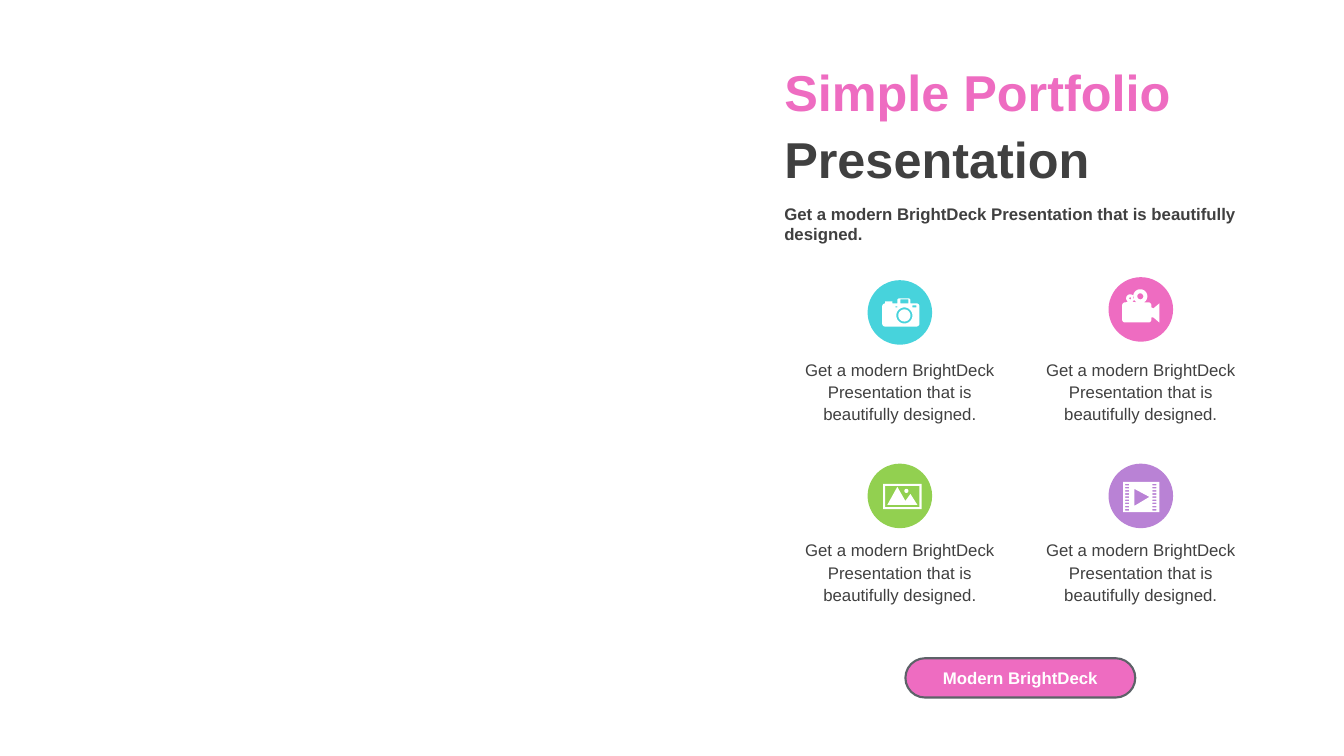
from math import cos, radians, sin

from pptx import Presentation
from pptx.dml.color import RGBColor
from pptx.enum.shapes import MSO_SHAPE as Shape
from pptx.enum.text import MSO_ANCHOR as Anchor, MSO_AUTO_SIZE as AutoSize, PP_ALIGN as Align
from pptx.util import Inches, Pt

COLORS = {
    "cyan": "47D3DC", "pink": "EE6CC1", "green": "92D050", "purple": "B982D5",
    "text": "404040", "white": "FFFFFF", "outline": "5D6268",
}
FONT = "Arial"
SENTENCE = "Get a modern BrightDeck Presentation that is beautifully designed."
COLUMNS = (7.77, 10.16)
CAPTION_ROWS = (3.5, 5.29)
CAPTION_WIDTH, CIRCLE_SIZE = 2.31, 0.64


def color(name):
    return RGBColor.from_string(COLORS[name])


def set_font(font, size, color_name, bold=False):
    font.name = FONT
    font.size = Pt(size)
    font.bold = bold
    font.color.rgb = color(color_name)


def add_text(slide, left, top, width, height, text, bold=False, align=Align.LEFT, spacing=None):
    box = slide.shapes.add_textbox(Inches(left), Inches(top), Inches(width), Inches(height))
    frame = box.text_frame
    frame.word_wrap = True
    frame.auto_size = AutoSize.SHAPE_TO_FIT_TEXT
    paragraph = frame.paragraphs[0]
    paragraph.text = text
    paragraph.alignment = align
    paragraph.line_spacing = spacing
    set_font(paragraph.font, 12, "text", bold)


def add_title(slide):
    box = slide.shapes.add_textbox(Inches(7.68), Inches(0.58), Inches(4.58), Inches(1.26))
    frame = box.text_frame
    frame.word_wrap = True
    frame.vertical_anchor = Anchor.MIDDLE
    paragraph = frame.paragraphs[0]
    paragraph.line_spacing = 1.1
    for text, color_name in (("Simple Portfolio ", "pink"), ("Presentation", "text")):
        run = paragraph.add_run()
        run.text = text
        set_font(run.font, 36, color_name, True)


def paint(shape, fill, line=None):
    shape.shadow.inherit = False
    shape.fill.solid()
    shape.fill.fore_color.rgb = color(fill)
    if line:
        shape.line.color.rgb = color(line)
        shape.line.width = Pt(1.5)
    else:
        shape.line.fill.background()


def add_circle(slide, left, top, fill):
    size = Inches(CIRCLE_SIZE)
    paint(slide.shapes.add_shape(Shape.OVAL, Inches(left), Inches(top), size, size), fill)


def add_button(slide, left, top, width, height, text):
    shape = slide.shapes.add_shape(
        Shape.ROUNDED_RECTANGLE, Inches(left), Inches(top), Inches(width), Inches(height))
    shape.adjustments[0] = 0.5
    paint(shape, "pink", "outline")
    shape.text_frame.vertical_anchor = Anchor.MIDDLE
    paragraph = shape.text_frame.paragraphs[0]
    paragraph.text = text
    paragraph.alignment = Align.CENTER
    set_font(paragraph.font, 12, "white", True)


# Contours for the icons: lists of points in inches
def rectangle(left, top, width, height):
    right, bottom = left + width, top + height
    return [(left, top), (right, top), (right, bottom), (left, bottom)]


def arc(x, y, radius, start, end):
    steps = max(6, (end - start) // 10)
    angles = [radians(start + (end - start) * i / steps) for i in range(steps + 1)]
    return [(x + radius * cos(a), y + radius * sin(a)) for a in angles]


def circle(x, y, radius):
    return arc(x, y, radius, 0, 360)


def add_icon(slide, contours):
    """Draw one white shape; inner contours become holes."""
    paths = [[(Inches(x), Inches(y)) for x, y in contour] for contour in contours]
    builder = slide.shapes.build_freeform(*paths[0][0])
    for index, points in enumerate(paths):
        if index:
            builder.move_to(*points[0])
        builder.add_line_segments(points[1:], close=True)
    paint(builder.convert_to_shape(), "white")


def camera():
    body = [
        *arc(8.78, 3.04, 0.03, 180, 270), (8.78, 2.99), (8.85, 2.99), (8.85, 3.01), (8.9, 3.01),
        *arc(8.92, 2.98, 0.02, 180, 270), *arc(9.01, 2.98, 0.02, 270, 360), (9.03, 3.01),
        *arc(9.09, 3.04, 0.03, 270, 360), *arc(9.09, 3.21, 0.03, 0, 90),
        *arc(8.78, 3.21, 0.03, 90, 180),
    ]
    lens = [circle(8.97, 3.13, radius) for radius in (0.08, 0.06)]
    windows = [rectangle(8.93, 2.97, 0.08, 0.04), rectangle(9.05, 3.03, 0.04, 0.02),
               rectangle(8.88, 3.04, 0.02, 0.01)]
    return [body, *lens, *windows]


def camcorder():
    body = [
        *arc(11.16, 3.03, 0.03, 180, 270),
        *arc(11.21, 2.96, 0.04, 120, 420), *arc(11.31, 2.94, 0.07, 120, 420),
        *arc(11.39, 3.03, 0.03, 270, 360), (11.42, 3.05), (11.44, 3.06),
        (11.5, 3.01), (11.5, 3.2), (11.44, 3.15), (11.42, 3.15),
        *arc(11.39, 3.17, 0.03, 0, 90), *arc(11.16, 3.17, 0.03, 90, 180),
    ]
    return [body, circle(11.21, 2.96, 0.01), circle(11.31, 2.94, 0.03)]


def landscape():
    mountains = [(8.9, 4.83), (8.98, 4.97), (9.03, 4.9), (9.1, 5.01), (8.8, 5.01)]
    return [rectangle(8.76, 4.8, 0.38, 0.25), rectangle(8.78, 4.82, 0.34, 0.21),
            mountains, circle(8.99, 4.87, 0.02)]


def film():
    pitch = 0.25 / 8
    holes = [rectangle(left, 4.8 + pitch * row, 0.04, pitch / 2)
             for left in (11.16, 11.43) for row in range(9)]
    play = [(11.25, 4.85), (11.25, 5.02), (11.4, 4.93)]
    return [rectangle(11.14, 4.78, 0.36, 0.3), play, *holes]


def main():
    presentation = Presentation()
    presentation.slide_width = Inches(13.33)
    presentation.slide_height = Inches(7.5)
    slide = presentation.slides.add_slide(presentation.slide_layouts[6])

    # Heading
    add_title(slide)
    add_text(slide, 7.68, 1.97, 4.92, 0.5, SENTENCE, bold=True)

    # Four features: column, row, circle top, colour, icon
    features = (
        (0, 0, 2.78, "cyan", camera), (1, 0, 2.75, "pink", camcorder),
        (0, 1, 4.6, "green", landscape), (1, 1, 4.6, "purple", film),
    )
    for column, row, circle_top, fill, icon in features:
        left = COLUMNS[column]
        add_circle(slide, left + (CAPTION_WIDTH - CIRCLE_SIZE) / 2, circle_top, fill)
        add_icon(slide, icon())
        add_text(slide, left, CAPTION_ROWS[row], CAPTION_WIDTH, 0.77, SENTENCE,
                 align=Align.CENTER, spacing=1.1)

    # Button
    add_button(slide, 8.98, 6.53, 2.28, 0.39, "Modern BrightDeck")
    presentation.save("out.pptx")


if __name__ == "__main__":
    main()
